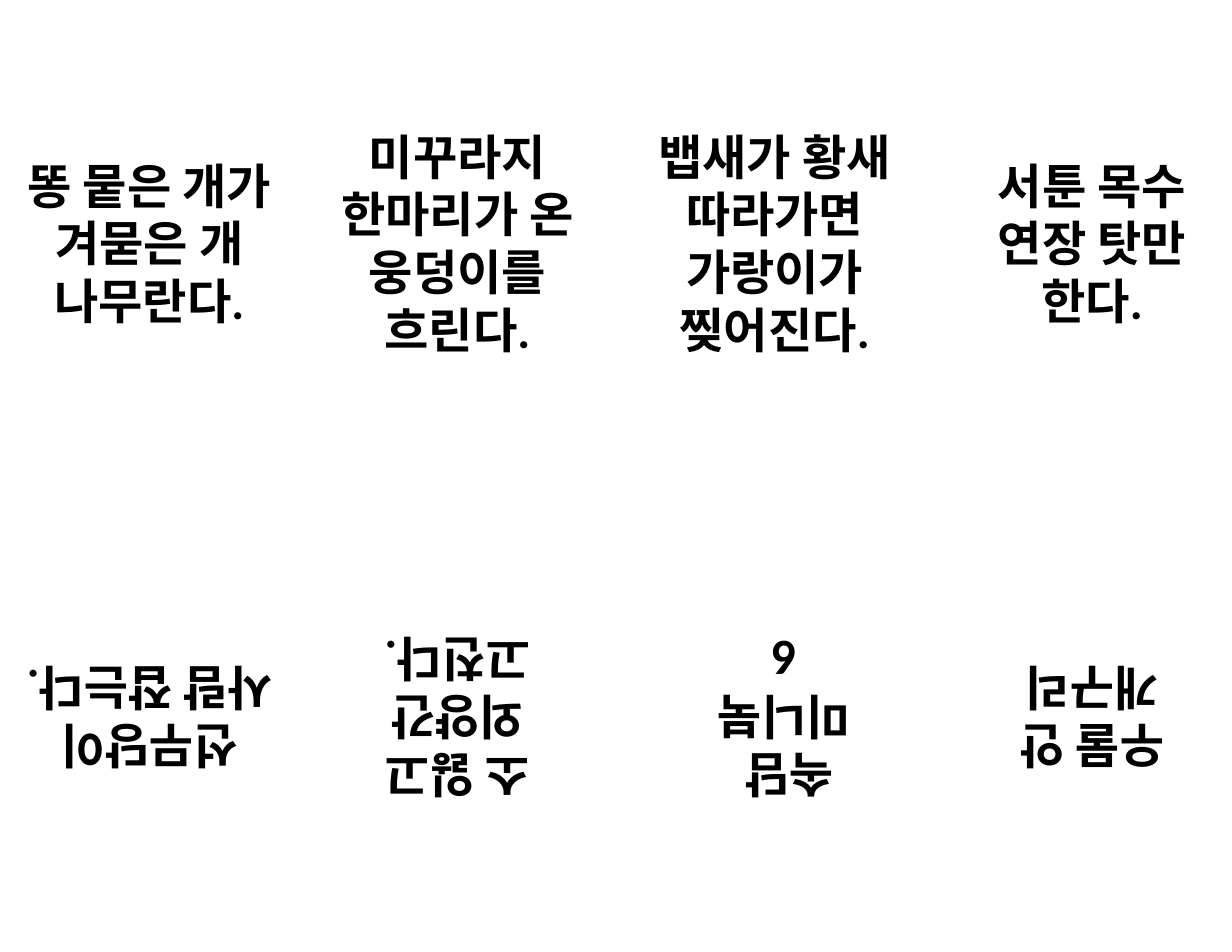
"""Build a fold-up mini book sheet of Korean proverbs, with the lower row upside down."""
import pptx
import pptx.dml.color
import pptx.enum.dml
import pptx.enum.shapes
import pptx.enum.text
import pptx.util

Pt = pptx.util.Pt

UPPER_PAGES = [
    (6, "똥 뭍은 개가 겨묻은 개 나무란다."),
    (204, "미꾸라지 한마리가 온 웅덩이를 흐린다."),
    (408, "뱁새가 황새 따라가면 가랑이가 찢어진다."),
    (612, "서툰 목수 연장 탓만 한다."),
]
LOWER_PAGES = [
    (6, "선무당이 사람 잡는다."),
    (204, "소 잃고 외양간 고친다."),
    (414, "속담 \n미니북\n6"),
    (612, "우물 안 개구리"),
]
ROWS = [(12, 0, UPPER_PAGES), (318, 180, LOWER_PAGES)]
PAGE_WIDTH, PAGE_HEIGHT = 180, 288


def set_color(color_format, value):
    color_format.rgb = pptx.dml.color.RGBColor.from_string(value)


def add_page(slide, left, top, rotation, text):
    shape = slide.shapes.add_shape(
        pptx.enum.shapes.MSO_SHAPE.RECTANGLE,
        Pt(left), Pt(top), Pt(PAGE_WIDTH), Pt(PAGE_HEIGHT))
    shape.rotation = rotation
    shape.shadow.inherit = False
    shape.fill.solid()
    set_color(shape.fill.fore_color, "FFFFFF")
    set_color(shape.line.color, "FFFFFF")
    shape.line.width = Pt(0.25)
    shape.line.dash_style = pptx.enum.dml.MSO_LINE.DASH

    frame = shape.text_frame
    frame.text = text
    frame.word_wrap = True
    frame.vertical_anchor = pptx.enum.text.MSO_ANCHOR.MIDDLE
    frame.margin_left = frame.margin_right = Pt(8)
    frame.margin_top = frame.margin_bottom = Pt(4)
    for paragraph in frame.paragraphs:
        paragraph.alignment = pptx.enum.text.PP_ALIGN.CENTER
        for run in paragraph.runs:
            run.font.name = "Calibri"
            run.font.size = Pt(31)
            run.font.bold = True
            set_color(run.font.color, "000000")


def main():
    presentation = pptx.Presentation()
    presentation.slide_width = Pt(792)
    presentation.slide_height = Pt(612)
    slide = presentation.slides.add_slide(presentation.slide_layouts[6])
    for top, rotation, pages in ROWS:
        for left, text in pages:
            add_page(slide, left, top, rotation, text)
    presentation.save("out.pptx")


if __name__ == "__main__":
    main()
